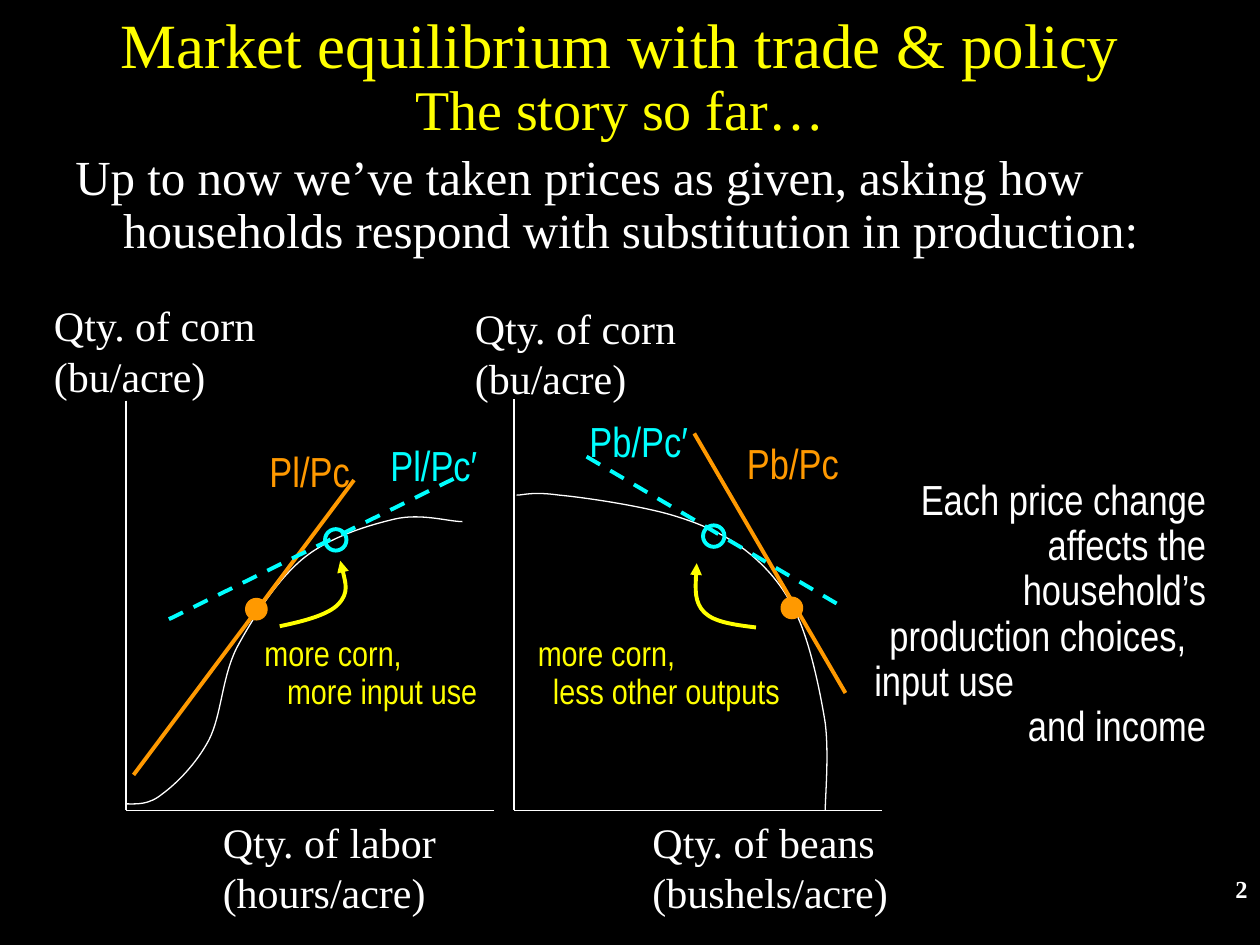
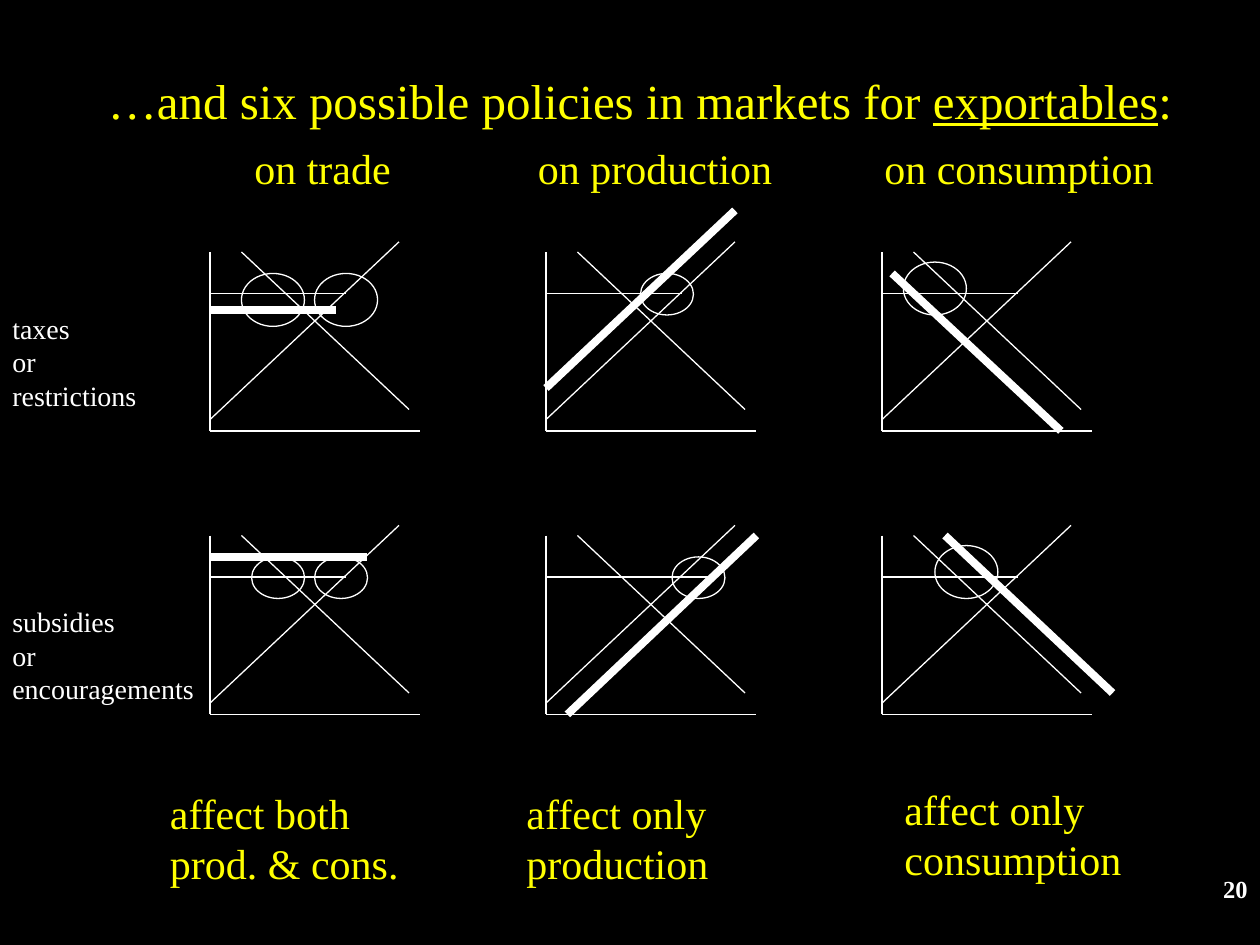
from dataclasses import dataclass

from lxml.etree import SubElement
from pptx import Presentation
from pptx.dml.color import RGBColor
from pptx.enum.dml import MSO_LINE
from pptx.enum.shapes import MSO_CONNECTOR, MSO_SHAPE
from pptx.enum.text import MSO_ANCHOR, PP_ALIGN
from pptx.oxml.ns import qn
from pptx.util import Inches, Pt


@dataclass(frozen=True)
class Theme:
    background: str = "000000"
    text: str = "FFFFFF"
    accent: str = "FFFF00"
    old_price: str = "FF9900"
    new_price: str = "00FFFF"
    serif: str = "Times New Roman"
    narrow: str = "Arial Narrow"
    title: int = 36
    subtitle: int = 32
    lead: int = 28
    label: int = 24
    callout: int = 20
    row_label: int = 16
    page_number: int = 14
    thin: float = 0.75
    medium: float = 2.25
    thick: float = 4.5


THEME = Theme()
LABEL_SLACK = 0.1


class Deck:
    def __init__(self, theme):
        self.theme = theme
        self.presentation = Presentation()
        self.presentation.slide_width = Inches(10)
        self.presentation.slide_height = Inches(7.5)
        self.slide = None

    def new_slide(self, number):
        blank = self.presentation.slide_layouts[6]
        self.slide = self.presentation.slides.add_slide(blank)
        fill = self.slide.background.fill
        fill.solid()
        fill.fore_color.rgb = RGBColor.from_string(self.theme.background)
        self.text((8.75, 6.89, 1.25, 0.33), [str(number)], self.theme.page_number,
                  bold=True, alignment=PP_ALIGN.RIGHT)

    def text(self, box, paragraphs, size, color=None, face=None,
             anchor=MSO_ANCHOR.TOP, bold=False, indent=(0, 0), **paragraph_format):
        """Each paragraph is a string or a list of (string, font changes); \\v breaks a line."""
        frame = self.slide.shapes.add_textbox(*map(Inches, box)).text_frame
        frame.word_wrap = True
        frame.vertical_anchor = anchor
        for index, runs in enumerate(paragraphs):
            paragraph = frame.paragraphs[0] if index == 0 else frame.add_paragraph()
            for name, value in paragraph_format.items():
                setattr(paragraph, name, value)
            self.indent(paragraph, *indent)
            for content, changes in [(runs, {})] if isinstance(runs, str) else runs:
                font_format = {"name": face or self.theme.serif, "size": Pt(size),
                               "bold": bold, **changes}
                for line_number, line in enumerate(content.split("\v")):
                    if line_number:
                        paragraph.add_line_break()
                    if line:
                        run = paragraph.add_run()
                        run.text = line
                        run.font.color.rgb = RGBColor.from_string(color or self.theme.text)
                        for name, value in font_format.items():
                            setattr(run.font, name, value)
        return frame

    def indent(self, paragraph, left, first):
        properties = paragraph._p.get_or_add_pPr()
        properties.set("marL", str(Inches(left)))
        properties.set("indent", str(Inches(first)))

    def title(self, box, runs, **paragraph_format):
        self.text(box, [runs], self.theme.title, self.theme.accent,
                  anchor=MSO_ANCHOR.MIDDLE, alignment=PP_ALIGN.CENTER, **paragraph_format)

    def label(self, left, top, width, height, *lines, size=None, **style):
        """Place one paragraph per line, with slack so that no line wraps."""
        self.text((left, top, width + LABEL_SLACK, height), lines,
                  size or self.theme.label, **style)

    def stroke(self, outline, color, width, dashed=False):
        outline.color.rgb = RGBColor.from_string(color or self.theme.text)
        outline.width = Pt(width or self.theme.thin)
        if dashed:
            outline.dash_style = MSO_LINE.DASH

    def line(self, start, end, color=None, width=None, dashed=False):
        connector = self.slide.shapes.add_connector(
            MSO_CONNECTOR.STRAIGHT, *map(Inches, (*start, *end)))
        self.stroke(connector.line, color, width, dashed)
        SubElement(connector.element.spPr, qn("a:effectLst"))

    def ellipse(self, box, color=None, width=None, filled=False):
        oval = self.slide.shapes.add_shape(MSO_SHAPE.OVAL, *map(Inches, box))
        oval.shadow.inherit = False
        if filled:
            oval.fill.solid()
            oval.fill.fore_color.rgb = RGBColor.from_string(color)
        else:
            oval.fill.background()
        self.stroke(oval.line, color, width)

    def curve(self, points, color=None, width=None, arrow_end=None):
        """Draw Bézier segments: a start point, then three points per segment."""
        start, *rest = [(Inches(x), Inches(y)) for x, y in points]
        builder = self.slide.shapes.build_freeform(*start)
        builder.add_line_segments(rest, close=False)
        outline = builder.convert_to_shape()
        outline.shadow.inherit = False
        outline.fill.background()
        self.stroke(outline.line, color, width)
        path = next(outline.element.iter(qn("a:path")))
        straight = path.findall(qn("a:lnTo"))
        for first in range(0, len(straight), 3):
            bezier = SubElement(path, qn("a:cubicBezTo"))
            for segment in straight[first:first + 3]:
                bezier.append(segment[0])
                path.remove(segment)
        if arrow_end:
            stroke = outline.element.spPr.find(qn("a:ln"))
            SubElement(stroke, qn(f"a:{arrow_end}"), type="triangle")


LABOR_RESPONSE = [
    (1, 6.38), (1.09, 6.38), (1.18, 6.39), (1.29, 6.3), (1.4, 6.22), (1.56, 6.06),
    (1.66, 5.87), (1.76, 5.67), (1.76, 5.38), (1.88, 5.14), (2.01, 4.9), (2.2, 4.6),
    (2.41, 4.43), (2.62, 4.26), (2.92, 4.17), (3.13, 4.12), (3.34, 4.07), (3.56, 4.14),
    (3.67, 4.14)]
PRODUCTION_FRONTIER = [
    (4.1, 3.93), (4.16, 3.93), (4.22, 3.9), (4.44, 3.93), (4.65, 3.95), (5.12, 4.02),
    (5.37, 4.1), (5.63, 4.18), (5.82, 4.28), (5.98, 4.42), (6.14, 4.56), (6.26, 4.72),
    (6.35, 4.94), (6.44, 5.16), (6.51, 5.49), (6.55, 5.74), (6.58, 5.99), (6.55, 6.32),
    (6.55, 6.43)]
LABOR_SHIFT = [(2.22, 4.97), (2.41, 4.93), (2.61, 4.88), (2.69, 4.79),
               (2.77, 4.7), (2.73, 4.57), (2.7, 4.45)]
BEANS_SHIFT = [(5.53, 4.47), (5.52, 4.62), (5.51, 4.78), (5.59, 4.86),
               (5.67, 4.94), (5.84, 4.96), (6, 4.98)]


def story_slide(deck):
    theme = deck.theme
    deck.new_slide(2)
    deck.title((0.67, 0, 8.5, 1.25),
               [("Market equilibrium with trade & policy\v", {}),
                ("The story so far…", {"size": Pt(theme.subtitle)})], line_spacing=0.9)
    deck.text((0.5, 1.17, 9.17, 1.17),
              ["Up to now we’ve taken prices as given, asking how households respond "
               "with substitution in production:"],
              theme.lead, indent=(0.38, -0.38), line_spacing=0.9)

    base = 6.43
    for origin, top in ((1, 3.18), (4.08, 3.17)):
        deck.line((origin, top), (origin, base))
        deck.line((origin, base), (origin + 2.92, base))
    deck.curve(LABOR_RESPONSE)
    deck.curve(PRODUCTION_FRONTIER)

    for left, top, width, *lines in (
            (0.33, 2.33, 1.82, "Qty. of corn", "(bu/acre)"),
            (1.67, base, 2, "Qty. of labor", "(hours/acre)"),
            (3.67, 2.35, 1.82, "Qty. of corn", "(bu/acre)"),
            (5.08, base, 2.07, "Qty. of beans", "(bushels/acre)")):
        deck.label(left, top, width, 0.9, *lines)

    for start, end, color, dashed in (
            ((2.81, 3.81), (1.06, 6.15), theme.old_price, False),
            ((3.6, 3.8), (1.33, 4.92), theme.new_price, True),
            ((6.71, 5.5), (5.51, 3.44), theme.old_price, False),
            ((6.64, 4.79), (4.58, 3.58), theme.new_price, True)):
        deck.line(start, end, color, theme.medium, dashed)
    for left, top, width, price, color in (
            (2.04, 3.49, 0.85, "Pl/Pc", theme.old_price),
            (3, 3.44, 0.9, "Pl/Pc′", theme.new_price),
            (5.83, 3.42, 0.94, "Pb/Pc", theme.old_price),
            (4.58, 3.25, 0.99, "Pb/Pc′", theme.new_price)):
        deck.label(left, top, width, 0.5, price, color=color, face=theme.narrow)

    dot = (0.17, 0.17)
    for old_choice in ((1.95, 4.75), (6.2, 4.74)):
        deck.ellipse(old_choice + dot, theme.old_price, filled=True)
    for new_choice in ((2.58, 4.2), (5.58, 4.17)):
        deck.ellipse(new_choice + dot, theme.new_price, theme.medium)

    deck.curve(LABOR_SHIFT, theme.accent, theme.medium, "tailEnd")
    deck.curve(BEANS_SHIFT, theme.accent, theme.medium, "headEnd")
    for left, width, hanging, effect in (
            (2, 1.92, 0.18, "more corn,\vmore input use"),
            (4.17, 2.17, 0.12, "more corn,\vless other outputs")):
        deck.text((left, 5, width, 0.7), [effect], theme.callout, theme.accent,
                  theme.narrow, indent=(hanging, -hanging), line_spacing=0.9)

    conclusion = deck.text(
        (6.75, 3.75, 2.92, 2.25),
        ["Each price change\vaffects the\vhousehold’s", "production choices,",
         "input use", "and income"],
        theme.label, face=theme.narrow, alignment=PP_ALIGN.RIGHT, line_spacing=0.9)
    for paragraph, left in zip(conclusion.paragraphs[1:3], (0.21, 0.09)):
        paragraph.alignment = PP_ALIGN.LEFT
        deck.indent(paragraph, left, 0)


# Policy line and affected areas, measured from the top of each market's price axis.
POLICIES = [
    [((0, 0.46), (1, 0.46), [(0.25, 0.17, 0.5, 0.42), (0.83, 0.17, 0.5, 0.42)]),
     ((0, 1.08), (1.5, -0.33), [(0.75, 0.17, 0.42, 0.33)]),
     ((0.08, 0.17), (1.42, 1.42), [(0.17, 0.08, 0.5, 0.42)])],
    [((0, 0.17), (1.25, 0.17), [(0.33, 0.17, 0.42, 0.33), (0.83, 0.17, 0.42, 0.33)]),
     ((0.17, 1.42), (1.67, 0), [(1, 0.17, 0.42, 0.33)]),
     ((0.5, 0), (1.83, 1.25), [(0.42, 0.08, 0.5, 0.42)])],
]


def market(deck, left, top, world_price_end, policy):
    """Draw axes, supply, demand and world price, then the policy on top."""
    def at(point):
        return left + point[0], top + point[1]

    for start, end in (((0, 0), (0, 1.42)), ((0, 1.42), (1.67, 1.42)),
                       ((0, 1.33), (1.5, -0.08)), ((0.25, 0), (1.58, 1.25)),
                       ((0, 0.33), (world_price_end, 0.33))):
        deck.line(at(start), at(end))
    policy_start, policy_end, affected_areas = policy
    deck.line(at(policy_start), at(policy_end), width=deck.theme.thick)
    for area in affected_areas:
        deck.ellipse(at(area) + area[2:])


def policies_slide(deck):
    theme = deck.theme
    deck.new_slide(20)
    lead = {"size": Pt(theme.lead)}
    deck.title((0.33, 0.25, 9.5, 1.08),
               [("…and six possible policies in markets for ", lead),
                ("exportables", {**lead, "underline": True}), (":", lead)])

    for row, policies in enumerate(POLICIES):
        for column, policy in enumerate(policies):
            world_price_end = 1.33 if (row, column) == (1, 1) else 1.08
            market(deck, (5 + 8 * column) / 3, 2 + 2.25 * row, world_price_end, policy)

    for top, width, *measures in ((2.42, 1.2, "taxes", "or", "restrictions"),
                                  (4.75, 1.66, "subsidies", "or", "encouragements")):
        deck.label(0, top, width, 0.91, *measures, size=theme.row_label)
    for left, width, heading in ((1.92, 1.28, "on trade"), (4.17, 2.06, "on production"),
                                 (6.92, 2.34, "on consumption")):
        deck.label(left, 1.08, width, 0.5, heading, color=theme.accent)
    for left, top, width, *effect in (
            (1.25, 6.2, 2.02, "affect both", "prod. & cons."),
            (4.08, 6.2, 1.64, "affect only", "production"),
            (7.08, 6.17, 1.92, "affect only", "consumption")):
        deck.label(left, top, width, 0.9, *effect, color=theme.accent)


def main():
    deck = Deck(THEME)
    story_slide(deck)
    policies_slide(deck)
    deck.presentation.save("out.pptx")


if __name__ == "__main__":
    main()
